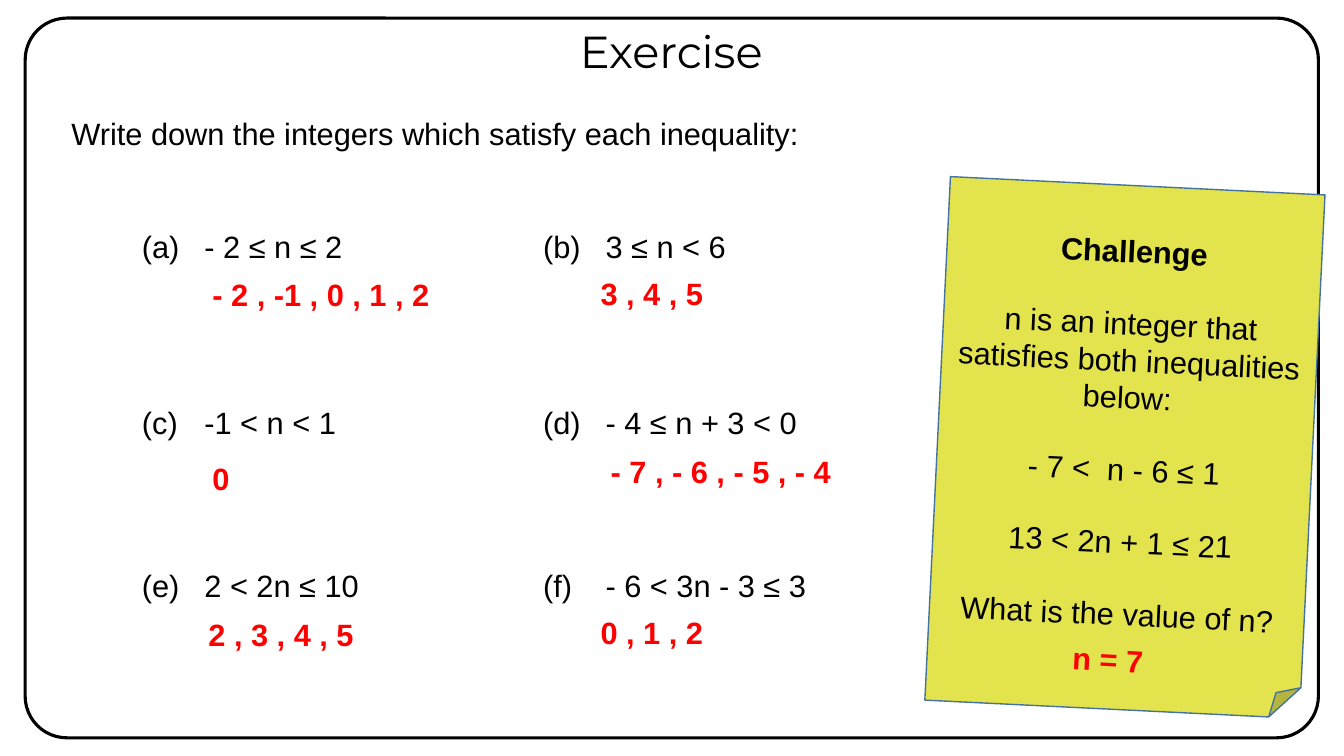
from lxml import etree
from pptx import Presentation
from pptx.dml.color import RGBColor
from pptx.enum.shapes import MSO_SHAPE
from pptx.enum.text import MSO_ANCHOR, PP_ALIGN
from pptx.oxml.ns import qn
from pptx.util import Emu, Inches, Pt

FRAME, NOTE = MSO_SHAPE.ROUNDED_RECTANGLE, MSO_SHAPE.FOLDED_CORNER
LEFT, CENTER, MIDDLE = PP_ALIGN.LEFT, PP_ALIGN.CENTER, MSO_ANCHOR.MIDDLE
BLACK, RED, WHITE, YELLOW, BLUE = "000000", "FF0000", "FFFFFF", "E3E34D", "43739E"
BODY_SIZE = 22
LINE_GAP = Pt(BODY_SIZE * 1.15)
EN_SPACE = " "  # "_" in the content stands for this wider space

# Content: label, inequality, answer, answer offset from the question
TITLE = "Exercise"
INSTRUCTION = "Write down the integers which satisfy each inequality:"
QUESTIONS = [
    ("(a)", "- 2_≤_n ≤_2", "- 2 , -1 , 0 , 1 , 2", (0.7, 0.48)),
    ("(b)", "3_≤_n_<_6", "3 , 4 , 5", (0.57, 0.47)),
    ("(c)", "-1_<_n_<_1", "0", (0.7, 0.55)),
    ("(d)", "- 4_≤_n + 3_<_0", "- 7 , - 6 , - 5 , - 4", (0.67, 0.48)),
    ("(e)", "2_<_2n_≤_10", "2 , 3 , 4 , 5", (0.66, 0.49)),
    ("(f)", "- 6_<_3n - 3_≤_3", "0 , 1 , 2", (0.57, 0.47)),
]
CHALLENGE = [
    "Challenge",
    "n is an integer that satisfies both inequalities below:",
    "- 7_< _n - 6_≤_1",
    "13_<_2n + 1_≤_21",
    "What is the value of n?",
]
CHALLENGE_ANSWER = "n_=_7"

# Grid in inches
COLUMNS = (1.31, 5.29)
ROWS = (2.21, 3.96, 5.57)
QUESTION_WIDTH, LINE_HEIGHT = 3.36, 0.47
EXPRESSION_TAB = 0.62


def color(value):
    return RGBColor.from_string(value)


def write(paragraph, text, ink=BLACK, bold=False, size=BODY_SIZE, font="Arial", align=LEFT):
    paragraph.text = text.replace("_", EN_SPACE)
    paragraph.alignment = align
    paragraph.font.name = font
    paragraph.font.size = Pt(size)
    paragraph.font.bold = bold
    paragraph.font.color.rgb = color(ink)


def add_text(slide, box, text, tab=None, **style):
    shape = slide.shapes.add_textbox(*map(Inches, box))
    shape.text_frame.word_wrap = True
    paragraph = shape.text_frame.paragraphs[0]
    if tab:
        tabs = etree.SubElement(paragraph._p.get_or_add_pPr(), qn("a:tabLst"))
        etree.SubElement(tabs, qn("a:tab"), pos=str(Inches(tab)), algn="l")
    write(paragraph, text, **style)
    return shape


def add_panel(slide, kind, box, corner, fill, line, width):
    shape = slide.shapes.add_shape(kind, *map(Inches, box))
    shape.shadow.inherit = False
    # The folded corner has no public adjustment, so the guide is set in XML
    geometry = shape._element.spPr.find(qn("a:prstGeom"))
    for guides in geometry.findall(qn("a:avLst")):
        geometry.remove(guides)
    guides = etree.SubElement(geometry, qn("a:avLst"))
    etree.SubElement(guides, qn("a:gd"), name="adj", fmla=f"val {round(corner * 100000)}")
    shape.fill.solid()
    shape.fill.fore_color.rgb = color(fill)
    shape.line.color.rgb = color(line)
    shape.line.width = Pt(width)
    return shape


def main():
    presentation = Presentation()
    presentation.slide_width, presentation.slide_height = Emu(12192000), Inches(7.5)
    slide = presentation.slides.add_slide(presentation.slide_layouts[6])

    # Frame and headings
    add_panel(slide, FRAME, (0.25, 0.18, 12.83, 7.14), 0.058, WHITE, BLACK, 2.25)
    add_text(slide, (5.09, 0.19, 3.14, 0.64), TITLE, size=32, font="Montserrat", align=CENTER)
    add_text(slide, (0.61, 1.09, 9.26, LINE_HEIGHT), INSTRUCTION)

    # Questions and answers, two to a row
    for index, (label, inequality, answer, (right, down)) in enumerate(QUESTIONS):
        row, column = divmod(index, len(COLUMNS))
        left, top = COLUMNS[column], ROWS[row]
        add_text(slide, (left, top, QUESTION_WIDTH, LINE_HEIGHT),
                 f"{label}\t{inequality}", tab=EXPRESSION_TAB)
        add_text(slide, (left + right, top + down, QUESTION_WIDTH - right, LINE_HEIGHT),
                 answer, ink=RED, bold=True)

    # Challenge note
    note = add_panel(slide, NOTE, (9.3, 1.84, 3.72, 5.2), 0.082, YELLOW, BLUE, 1)
    note.rotation = 2.8
    frame = note.text_frame
    frame.word_wrap = True
    frame.vertical_anchor = MIDDLE
    for index, text in enumerate(CHALLENGE):
        paragraph = frame.add_paragraph() if index else frame.paragraphs[0]
        write(paragraph, text, bold=index == 0, align=CENTER)
        if index:
            paragraph.space_before = LINE_GAP
    solution = add_text(slide, (10.54, 6.33, 1.72, LINE_HEIGHT), CHALLENGE_ANSWER,
                        ink=RED, bold=True)
    solution.rotation = 3.2

    presentation.save("out.pptx")


if __name__ == "__main__":
    main()
